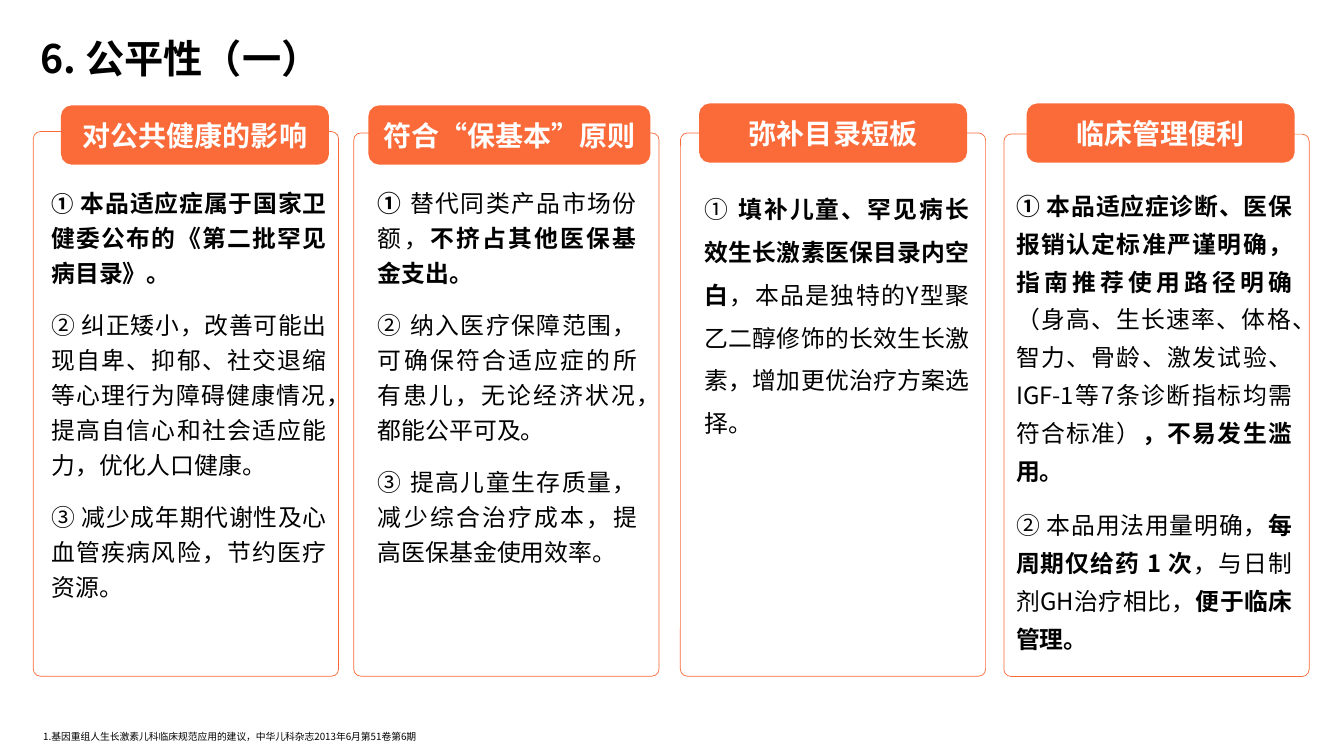
import pptx
import pptx.util
import pptx.dml.color
import pptx.enum.shapes
import pptx.enum.text
import pptx.oxml
import pptx.oxml.ns
from dataclasses import dataclass

Pt = pptx.util.Pt
ALIGN = pptx.enum.text.PP_ALIGN
ANCHOR = pptx.enum.text.MSO_ANCHOR


@dataclass(frozen=True)
class Theme:
    accent: str = "FB6A39"
    ink: str = "000000"
    white: str = "FFFFFF"
    font: str = "Noto Sans CJK SC"
    alternate: str = "Calibri"
    title: int = 28
    heading: int = 20
    body: int = 17
    marker: int = 16
    footnote: int = 7


@dataclass(frozen=True)
class Run:
    text: str
    bold: bool = False
    size: int = Theme.body
    font: str = Theme.font
    color: str = Theme.ink


@dataclass(frozen=True)
class Column:
    heading: str
    panel: tuple
    tab: tuple
    body: tuple
    points: list
    line_spacing: object
    before: int = 6
    after: int = 6


class FairnessSlide:
    def __init__(self, deck, theme):
        self.theme = theme
        self.slide = deck.slides.add_slide(deck.slide_layouts[6])

    def add_runs(self, paragraph, runs):
        for part in runs:
            run = paragraph.add_run()
            run.text = part.text
            run.font.size = Pt(part.size)
            run.font.bold = part.bold
            run.font.name = part.font
            run.font.color.rgb = pptx.dml.color.RGBColor.from_string(part.color)
            east_asian = pptx.oxml.parse_xml(
                f'<a:ea {pptx.oxml.ns.nsdecls("a")} typeface="{self.theme.font}"/>')
            run.font._element.find(pptx.oxml.ns.qn("a:latin")).addnext(east_asian)

    def rounded(self, box, line=None, fill=False, radius=None):
        shape = self.slide.shapes.add_shape(
            pptx.enum.shapes.MSO_SHAPE.ROUNDED_RECTANGLE, *map(Pt, box))
        shape.shadow.inherit = False
        accent = pptx.dml.color.RGBColor.from_string(self.theme.accent)
        if fill:
            shape.fill.solid()
            shape.fill.fore_color.rgb = accent
        else:
            shape.fill.background()
        if line:
            shape.line.color.rgb = accent
            shape.line.width = Pt(line)
        else:
            shape.line.fill.background()
        if radius:
            shape.adjustments[0] = radius
        return shape

    def label(self, shape, run, align):
        frame = shape.text_frame
        frame.word_wrap = True
        frame.vertical_anchor = ANCHOR.MIDDLE
        frame.paragraphs[0].alignment = align
        self.add_runs(frame.paragraphs[0], [run])

    def title(self, box, text):
        self.label(self.rounded(box), Run(text, True, self.theme.title), ALIGN.LEFT)

    def text_box(self, box):
        frame = self.slide.shapes.add_textbox(*map(Pt, box)).text_frame
        frame.word_wrap = True
        return frame

    def column(self, column):
        """Draw the outlined panel, its body text and the tab on its top edge."""
        self.rounded(column.panel, line=0.5, radius=0.023)
        frame = self.text_box(column.body)
        frame.margin_left = frame.margin_right = 0
        frame.margin_top = frame.margin_bottom = 0
        for index, runs in enumerate(column.points):
            paragraph = frame.add_paragraph() if index else frame.paragraphs[0]
            paragraph.alignment = ALIGN.JUSTIFY
            paragraph.line_spacing = column.line_spacing
            paragraph.space_before = Pt(column.before)
            paragraph.space_after = Pt(column.after)
            self.add_runs(paragraph, runs)
        tab = self.rounded(column.tab, line=2, fill=True)
        heading = Run(column.heading, True, self.theme.heading, color=self.theme.white)
        self.label(tab, heading, ALIGN.CENTER)

    def footnote(self, box, text):
        frame = self.text_box(box)
        self.add_runs(frame.paragraphs[0], [Run(text, size=self.theme.footnote)])


THEME = Theme()
COLUMNS = [
    Column(
        "对公共健康的影响",
        (23.8, 94, 218, 389), (44.6, 76.3, 189.4, 40.3), (36.7, 130.3, 196.6, 352),
        [
            [Run("①", True, THEME.marker), Run(" "),
             Run("本品适应症属于国家卫健委公布的《第二批罕见病目录》。", True)],
            [Run("② 纠正矮小，改善"),
             Run("可能出现自卑、抑郁、社交退缩等心理行为障碍", font=THEME.alternate),
             Run("健康情况，提高"),
             Run("自信心", font=THEME.alternate),
             Run("和社会适应能力，优化人口健康。")],
            [Run("③ 减少成年期代谢性及心血管疾病风险，节约医疗资源。")],
        ],
        Pt(25)),
    Column(
        "符合“保基本”原则",
        (252.7, 95, 218, 388), (264.2, 76.3, 199.4, 40.3), (270, 130.3, 185, 345),
        [
            [Run("① ", True), Run("替代同类产品市场份额，"),
             Run("不挤占其他医保基金支出。", True)],
            [Run("② 纳入医疗保障范围，可确保符合适应症的所有患儿，"
                 "无论经济状况，都能公平可及。")],
            [Run("③ 提高儿童生存质量，减少综合治疗成本，提高医保基金使用效率。")],
        ],
        Pt(25)),
    Column(
        "弥补目录短板",
        (486, 95, 218, 388), (500.4, 74.9, 189.4, 40.3), (503.3, 128.9, 189.4, 193),
        [
            [Run("① "), Run("填补儿童、罕见病长效生长激素医保目录内空白", True),
             Run("，本品是独特的Y型聚乙二醇修饰的长效生长激素，增加更优治疗方案选择。")],
        ],
        1.5, before=0, after=12),
    Column(
        "临床管理便利",
        (717.1, 95.8, 218, 387.4), (734.4, 74.9, 189.4, 40.3), (725.8, 130.3, 197.3, 184.3),
        [
            [Run("① 本品适应症诊断、医保报销认定标准严谨明确，指南推荐使用路径明确", True),
             Run("（身高、生长速率、体格、智力、骨龄、激发试验、"
                 "IGF-1等7条诊断指标均需符合标准）"),
             Run("，不易发生滥用。", True)],
            [Run("② 本品用法用量明确，"), Run("每周期仅给药 1 次", True),
             Run("，与日制剂GH治疗相比，"), Run("便于临床管理。", True)],
        ],
        Pt(27)),
]


def main():
    deck = pptx.Presentation()
    deck.slide_width, deck.slide_height = Pt(960), Pt(540)
    fairness = FairnessSlide(deck, THEME)
    fairness.title((19.4, 13.7, 234.7, 55.4), "6. 公平性（一）")
    for column in COLUMNS:
        fairness.column(column)
    fairness.footnote(
        (23.8, 518.4, 338.4, 15.8),
        "1.基因重组人生长激素儿科临床规范应用的建议，中华儿科杂志2013年6月第51卷第6期")
    deck.save("out.pptx")


if __name__ == "__main__":
    main()
